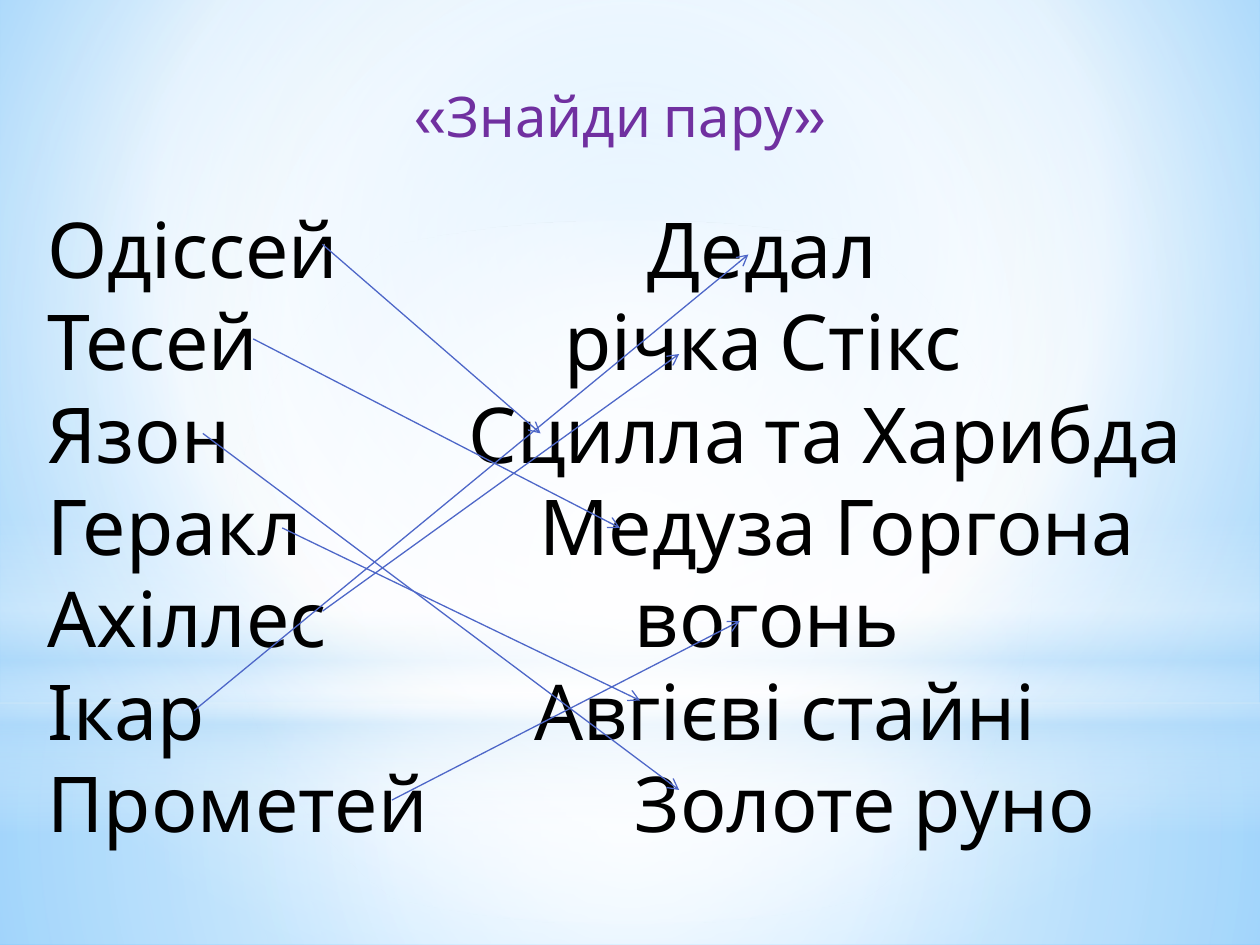
from dataclasses import dataclass

from pptx import Presentation
from pptx.dml.color import RGBColor
from pptx.enum import shapes, text
from pptx.oxml import parse_xml
from pptx.oxml.ns import nsdecls, qn
from pptx.util import Inches, Pt


@dataclass(frozen=True)
class Theme:
    font: str = "Cabin"
    head: str = "7030A0"
    body: str = "000000"
    line: str = "4E67C8"
    white: str = "FFFFFF"
    sky: str = "B4DCFA"
    pale: str = "9ED5FF"
    deep: str = "5BB9FF"
    big: int = 44
    mid: int = 32
    thin: float = 0.75


T = Theme()
# Left name, right name, and where the right name starts, from the text edge
PAIRS = [
    ("Одіссей", "Дедал", 4.76),
    ("Тесей", "річка Стікс", 4.1),
    ("Язон", "Сцилла та Харибда", 3.34),
    ("Геракл", "Медуза Горгона", 3.9),
    ("Ахіллес", "вогонь", 4.66),
    ("Ікар", "Авгієві стайні", 3.86),
    ("Прометей", "Золоте руно", 4.66),
]
# Arrow ends, from the corner of the pairs box
LINKS = [
    (2.28, 0.39, 4.01, 1.89),
    (1.73, 1.14, 4.64, 2.64),
    (1.33, 1.89, 5.11, 4.72),
    (1.96, 2.64, 4.8, 4.01),
    (2.28, 3.3, 5.11, 1.26),
    (1.26, 4.09, 5.66, 0.47),
    (2.83, 4.8, 5.59, 3.38),
]


def blend(host, stops, focus=None):
    """Swap the solid fill of host for a gradient: round at focus, else downward."""
    marks = "".join(
        f'<a:gs pos="{pos * 1000}"><a:srgbClr val="{hue}">'
        f'<a:alpha val="{alpha * 1000}"/></a:srgbClr></a:gs>'
        for pos, hue, alpha in stops)
    if focus:
        rect = " ".join(f'{k}="{v * 1000}"' for k, v in zip("ltrb", focus))
        way = f'<a:path path="circle"><a:fillToRect {rect}/></a:path>'
    else:
        way = '<a:lin ang="5400000" scaled="0"/>'
    fill = parse_xml(f'<a:gradFill {nsdecls("a")} rotWithShape="1">'
                     f'<a:gsLst>{marks}</a:gsLst>{way}</a:gradFill>')
    host.replace(host.find(qn("a:solidFill")), fill)


def glow(slide, box, kind, stops, focus=None):
    shape = slide.shapes.add_shape(kind, *map(Inches, box))
    shape.shadow.inherit = False
    shape.line.fill.background()
    shape.fill.solid()
    blend(shape.element.spPr, stops, focus)


def sky(slide, box):
    """Background and its four soft layers."""
    x, y, w, h = box
    mid = (50, 50, 50, 50)
    rect, oval = shapes.MSO_SHAPE.RECTANGLE, shapes.MSO_SHAPE.OVAL
    slide.background.fill.solid()
    blend(slide.element.xpath(".//p:bgPr")[0],
          [(0, T.pale, 100), (60, T.white, 100), (100, T.deep, 100)],
          (20, 10, 20, 60))
    cut = 5.58
    glow(slide, (x, y + cut, w, h - cut), rect,
         [(0, T.white, 91), (37, T.white, 76), (100, T.sky, 79)], mid)
    glow(slide, (x, y, w, cut), rect,
         [(0, T.white, 89), (48, T.white, 62), (100, T.sky, 79)], mid)
    glow(slide, (x, y + 4.12, w, 2.5), rect,
         [(0, T.white, 0), (29, T.white, 30), (45, T.sky, 40),
          (55, T.white, 26), (65, T.sky, 60), (100, T.white, 0)])
    glow(slide, (x, y + 1.75, w, cut), oval,
         [(0, T.white, 100), (56, T.white, 0)], mid)


def write(slide, box, lines, size, color, align=text.PP_ALIGN.LEFT, tabs=()):
    """Add a text box, one paragraph a line, each with its own tab stop."""
    frame = slide.shapes.add_textbox(*map(Inches, box)).text_frame
    frame.word_wrap = True
    frame.auto_size = text.MSO_AUTO_SIZE.SHAPE_TO_FIT_TEXT
    frame.text = "\n".join(lines)
    for para in frame.paragraphs:
        para.alignment = align
    for para, tab in zip(frame.paragraphs, tabs):
        para._p.get_or_add_pPr().append(parse_xml(
            f'<a:tabLst {nsdecls("a")}><a:tab pos="{Inches(tab)}" algn="l"/></a:tabLst>'))
    for para in frame.paragraphs:
        for run in para.runs:
            run.font.name = T.font
            run.font.size = Pt(size)
            run.font.color.rgb = RGBColor.from_string(color)


def arrow(slide, ends):
    line = slide.shapes.add_connector(
        shapes.MSO_CONNECTOR.STRAIGHT, *map(Inches, ends))
    line.line.width = Pt(T.thin)
    line.line.color.rgb = RGBColor.from_string(T.line)
    line.line._get_or_add_ln().append(
        parse_xml(f'<a:tailEnd {nsdecls("a")} type="arrow"/>'))
    line.element.spPr.append(parse_xml(f'<a:effectLst {nsdecls("a")}/>'))


def title(slide, box):
    write(slide, box, ["«Знайди пару»"], T.mid, T.head, text.PP_ALIGN.CENTER)


def pairs(slide, box):
    """Names in two ragged columns, with arrows that join the matches."""
    x, y = box[:2]
    write(slide, box, [f"{left}\t{right}" for left, right, _ in PAIRS],
          T.big, T.body, tabs=[tab for *_, tab in PAIRS])
    for x1, y1, x2, y2 in LINKS:
        arrow(slide, (x + x1, y + y1, x + x2, y + y2))


def main():
    deck = Presentation()
    deck.slide_width, deck.slide_height = Inches(10), Inches(7.5)
    slide = deck.slides.add_slide(deck.slide_layouts[6])
    sky(slide, (0, 0, 10, 7.5))
    title(slide, (1.93, 0.6, 5.98, 0.64))
    pairs(slide, (0.28, 1.55, 9.61, 5.28))
    deck.save("out.pptx")


if __name__ == "__main__":
    main()
